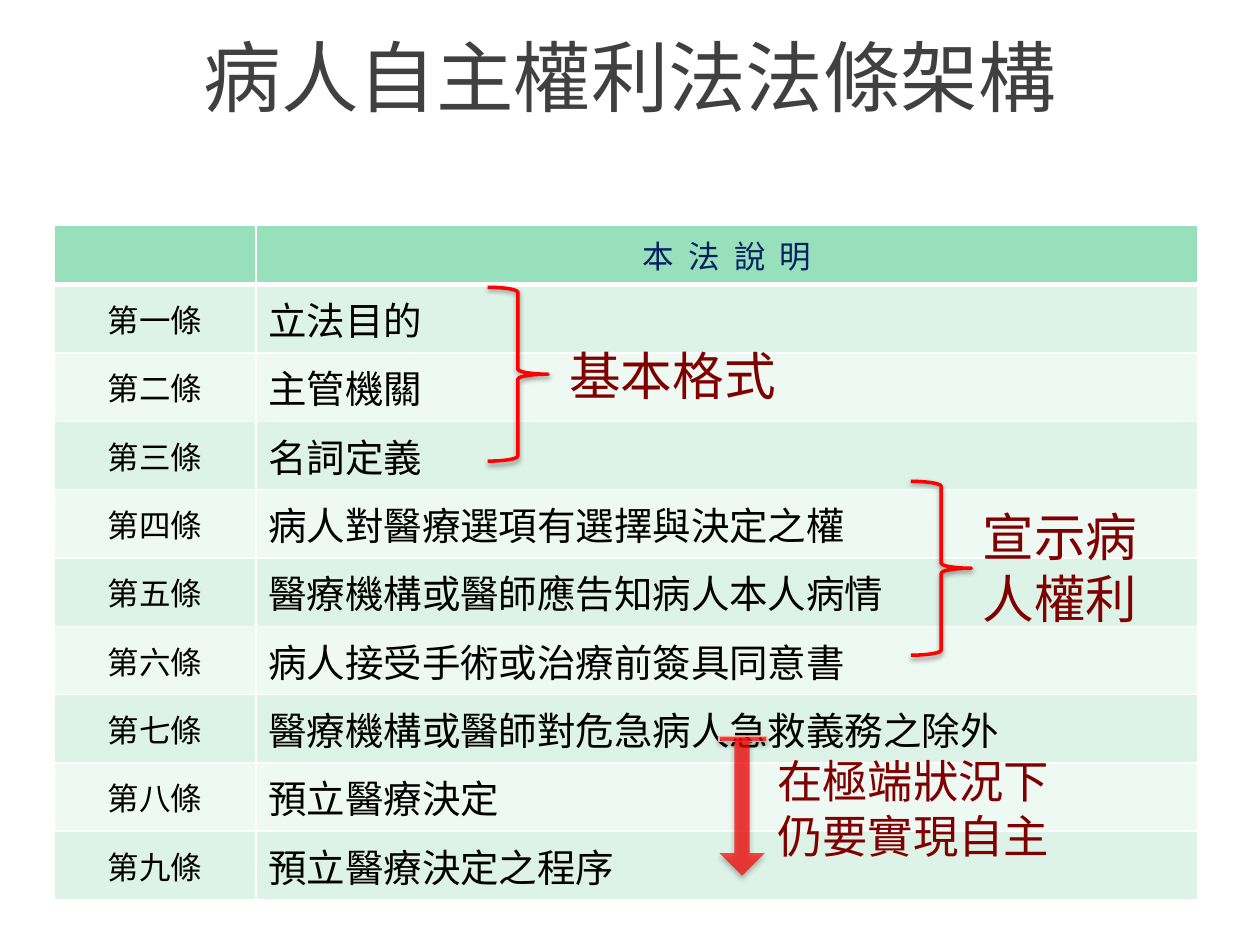
from dataclasses import dataclass

import pptx
import pptx.dml.color
import pptx.enum.shapes
import pptx.enum.text
import pptx.oxml
import pptx.oxml.ns
import pptx.util
from lxml import etree

Inches = pptx.util.Inches
Pt = pptx.util.Pt
qn = pptx.oxml.ns.qn
Shapes = pptx.enum.shapes.MSO_SHAPE
Align = pptx.enum.text.PP_ALIGN
Anchor = pptx.enum.text.MSO_ANCHOR

COLORS = {
    "title": "404040",
    "header": "98DFBB",
    "header_text": "002060",
    "odd_row": "DDF3E7",
    "even_row": "EFF9F3",
    "border": "FFFFFF",
    "text": "000000",
    "mark": "FF0000",
    "mark_edge": "F5AD9D",
    "note": "800000",
}
TABLE_FONT = "Noto Sans CJK SC"
NOTE_FONT = "Arial"

ARTICLES = [
    ("第一條", "立法目的"),
    ("第二條", "主管機關"),
    ("第三條", "名詞定義"),
    ("第四條", "病人對醫療選項有選擇與決定之權"),
    ("第五條", "醫療機構或醫師應告知病人本人病情"),
    ("第六條", "病人接受手術或治療前簽具同意書"),
    ("第七條", "醫療機構或醫師對危急病人急救義務之除外"),
    ("第八條", "預立醫療決定"),
    ("第九條", "預立醫療決定之程序"),
]


@dataclass
class Box:
    left: float
    top: float
    width: float
    height: float

    def lengths(self) -> list:
        return [Inches(n) for n in (self.left, self.top, self.width, self.height)]


@dataclass
class Note:
    text: str
    box: Box
    size: float


NOTES = [
    Note("基本格式", Box(4.42, 2.68, 2.06, 0.6), 29.5),
    Note("宣示病人權利", Box(7.7, 3.96, 1.8, 1.1), 29.5),
    Note("在極端狀況下仍要實現自主", Box(6.07, 5.93, 2.47, 0.97), 25.9),
]
BRACES = [Box(3.87, 2.28, 0.48, 1.38), Box(7.23, 3.82, 0.48, 1.38)]


def rgb(name: str) -> pptx.dml.color.RGBColor:
    return pptx.dml.color.RGBColor.from_string(COLORS[name])


def set_font(paragraph, name: str, size: float, color: str) -> None:
    font = paragraph.font
    font.name, font.size, font.bold = name, Pt(size), False
    font.color.rgb = rgb(color)


def add_border(cell, side: str, width: float, position: int) -> None:
    line = etree.Element(qn(f"a:ln{side}"), w=str(Pt(width)))
    fill = etree.SubElement(line, qn("a:solidFill"))
    etree.SubElement(fill, qn("a:srgbClr"), val=COLORS["border"])
    cell._tc.get_or_add_tcPr().insert(position, line)


def fill_cell(cell, text: str, size: float, color: str, fill: str,
              centered: bool, bottom: float = 1) -> None:
    cell.text = text
    cell.vertical_anchor = Anchor.MIDDLE
    cell.fill.solid()
    cell.fill.fore_color.rgb = rgb(fill)
    paragraph = cell.text_frame.paragraphs[0]
    paragraph.alignment = Align.CENTER if centered else Align.LEFT
    set_font(paragraph, TABLE_FONT, size, color)
    for position, (side, width) in enumerate(
            [("L", 1), ("R", 1), ("T", 1), ("B", bottom)]):
        add_border(cell, side, width, position)


def add_mark(slide, kind, box: Box, shadow_alpha: int, distance: float):
    """Add a preset shape with a soft shadow below it."""
    shape = slide.shapes.add_shape(kind, *box.lengths())
    shape.shadow.inherit = False
    effects = shape._element.spPr.find(qn("a:effectLst"))
    shadow = etree.SubElement(
        effects, qn("a:outerShdw"), blurRad=str(Pt(3.1)), dist=str(Pt(distance)),
        dir="5400000", rotWithShape="0")
    color = etree.SubElement(shadow, qn("a:srgbClr"), val="000000")
    etree.SubElement(color, qn("a:alpha"), val=str(shadow_alpha * 1000))
    return shape


def add_brace(slide, box: Box) -> None:
    brace = add_mark(slide, Shapes.RIGHT_BRACE, box, 38, 1.6)
    brace.fill.background()
    brace.line.color.rgb = rgb("mark")
    brace.line.width = Pt(2)


def add_solid_mark(slide, kind, box: Box):
    shape = add_mark(slide, kind, box, 35, 1.8)
    shape.fill.solid()
    shape.fill.fore_color.rgb = rgb("mark")
    color = shape._element.spPr.find(qn("a:solidFill")).find(qn("a:srgbClr"))
    etree.SubElement(color, qn("a:alpha"), val="70000")
    return shape


def add_note(slide, note: Note) -> None:
    frame = slide.shapes.add_textbox(*note.box.lengths()).text_frame
    frame.word_wrap = True
    frame.text = note.text
    set_font(frame.paragraphs[0], NOTE_FONT, note.size, "note")


def add_articles(slide) -> None:
    table = slide.shapes.add_table(
        len(ARTICLES) + 1, 2, *Box(0.43, 1.79, 9.08, 5.06).lengths()).table
    for column, width in zip(table.columns, (1.6, 7.48)):
        column.width = Inches(width)
    for index, row in enumerate(table.rows):
        row.height = Inches(0.51 if index else 0.47)
    for column, text in enumerate(("", "本  法  說  明")):
        fill_cell(table.cell(0, column), text, 18, "header_text", "header", True, 3)
    for index, (article, summary) in enumerate(ARTICLES, start=1):
        fill = "odd_row" if index % 2 else "even_row"
        fill_cell(table.cell(index, 0), article, 18, "text", fill, True)
        fill_cell(table.cell(index, 1), summary, 22, "text", fill, False)


def main() -> None:
    presentation = pptx.Presentation()
    presentation.slide_width, presentation.slide_height = Inches(10), Inches(7.5)
    slide = presentation.slides.add_slide(presentation.slide_layouts[5])

    # Title
    title = slide.shapes.title
    title.left, title.top, title.width, title.height = Box(0, 0.18, 10, 0.84).lengths()
    title.text_frame.text = "病人自主權利法法條架構"
    title.text_frame.vertical_anchor = Anchor.MIDDLE
    paragraph = title.text_frame.paragraphs[0]
    paragraph.alignment = Align.CENTER
    set_font(paragraph, NOTE_FONT, 44.3, "title")

    # Table of articles
    add_articles(slide)

    # Braces, downward arrow with its starting bar, and notes
    for box in BRACES:
        add_brace(slide, box)
    bar = add_solid_mark(slide, Shapes.MATH_MINUS, Box(5.64, 5.79, 0.51, 0.15))
    bar.line.color.rgb = rgb("mark_edge")
    bar.line.width = Pt(0.75)
    arrow = add_solid_mark(slide, Shapes.DOWN_ARROW, Box(5.71, 5.86, 0.36, 1.09))
    arrow.adjustments[0] = 0.34
    arrow.line.fill.background()
    for note in NOTES:
        add_note(slide, note)

    presentation.save("out.pptx")


if __name__ == "__main__":
    main()
